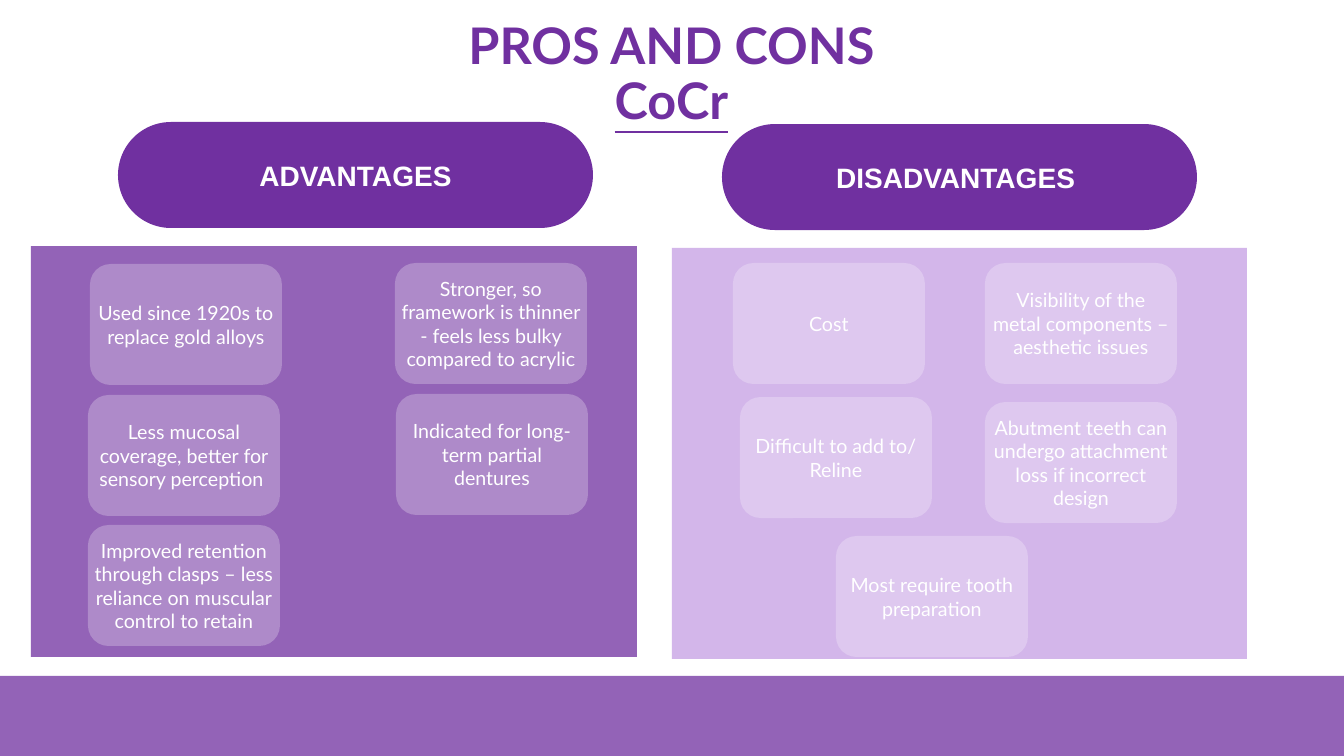
import pptx
import pptx.util
import pptx.dml.color
import pptx.enum.shapes
import pptx.enum.text
import pptx.oxml.ns
import lxml.etree

# Content: lengths in px
SIZE = (1344, 756)
PURPLE, LILAC, WHITE = "7030A0", "D3B6EA", "FFFFFF"
TITLE = [("PROS AND CONS", False), ("CoCr", True)]
BAND = (0, 676, 1344, 80)
PANELS = [
    ((672, 248, 575, 411), LILAC, 100),
    ((31, 246, 606, 411), PURPLE, 75),
]
HEADS = [
    ("ADVANTAGES", 118, 122),
    ("DISADVANTAGES ", 722, 124),
]
HEAD = (475, 106)
CARDS = [
    ("Used since 1920s to replace gold alloys", 90, 264),
    ("Less mucosal coverage, better for sensory perception ", 88, 395),
    ("Improved retention through clasps – less reliance on muscular control to retain", 88, 525),
    ("Stronger, so framework is thinner - feels less bulky compared to acrylic", 395, 263),
    ("Indicated for long-term partial dentures", 396, 394),
    ("Cost", 733, 263),
    ("Difficult to add to/ Reline", 740, 397),
    ("Visibility of the metal components – aesthetic issues", 985, 263),
    ("Abutment teeth can undergo attachment loss if incorrect design", 985, 402),
    ("Most require tooth preparation", 836, 536),
]
CARD = (192, 121)
SCALE = 914400 / 100.8


def emu(px):
    return pptx.util.Emu(round(px * SCALE))


def color(code):
    return pptx.dml.color.RGBColor.from_string(code)


def block(box, fill, alpha=100, adj=None):
    kinds = pptx.enum.shapes.MSO_SHAPE
    kind = kinds.RECTANGLE if adj is None else kinds.ROUNDED_RECTANGLE
    shape = slide.shapes.add_shape(kind, *map(emu, box))
    shape.shadow.inherit = False
    shape.line.fill.background()
    shape.fill.solid()
    shape.fill.fore_color.rgb = color(fill)
    if adj is not None:
        shape.adjustments[0] = adj
    if alpha < 100:
        qn = pptx.oxml.ns.qn
        tint = shape.element.spPr.find(qn("a:solidFill")).find(qn("a:srgbClr"))
        lxml.etree.SubElement(tint, qn("a:alpha"), val=str(alpha * 1000))
    return shape


def write(shape, lines, font="Lato", size=14, ink=WHITE, bold=False, inset=10, space=None):
    """Write lines of (text, underlined) as one centred paragraph."""
    frame = shape.text_frame
    frame.word_wrap = True
    frame.vertical_anchor = pptx.enum.text.MSO_ANCHOR.MIDDLE
    frame.margin_left = frame.margin_right = emu(inset)
    frame.margin_top = frame.margin_bottom = emu(5)
    para = frame.paragraphs[0]
    para.alignment = pptx.enum.text.PP_ALIGN.CENTER
    para.line_spacing = space
    for i, (text, under) in enumerate(lines):
        if i:
            para.add_line_break()
        run = para.add_run()
        run.text = text
        run.font.name = font
        run.font.size = pptx.util.Pt(size)
        run.font.bold = bold
        run.font.underline = under
        run.font.color.rgb = color(ink)


deck = pptx.Presentation()
deck.slide_width, deck.slide_height = map(emu, SIZE)
slide = deck.slides.add_slide(deck.slide_layouts[6])

# Bottom band and title
block(BAND, PURPLE, 75)
title = slide.shapes.add_textbox(*map(emu, (205, 34, 933, 83)))
write(title, TITLE, size=36, ink=PURPLE, bold=True, space=0.9)

# Panels
for box, fill, alpha in PANELS:
    block(box, fill, alpha)

# Headings
for text, x, y in HEADS:
    pill = block((x, y, *HEAD), PURPLE, adj=0.5)
    write(pill, [(text, False)], font="Arial", size=20, bold=True)

# Cards
for text, x, y in CARDS:
    card = block((x, y, *CARD), WHITE, 25, adj=0.17)
    write(card, [(text, False)], inset=0)

deck.save("out.pptx")
